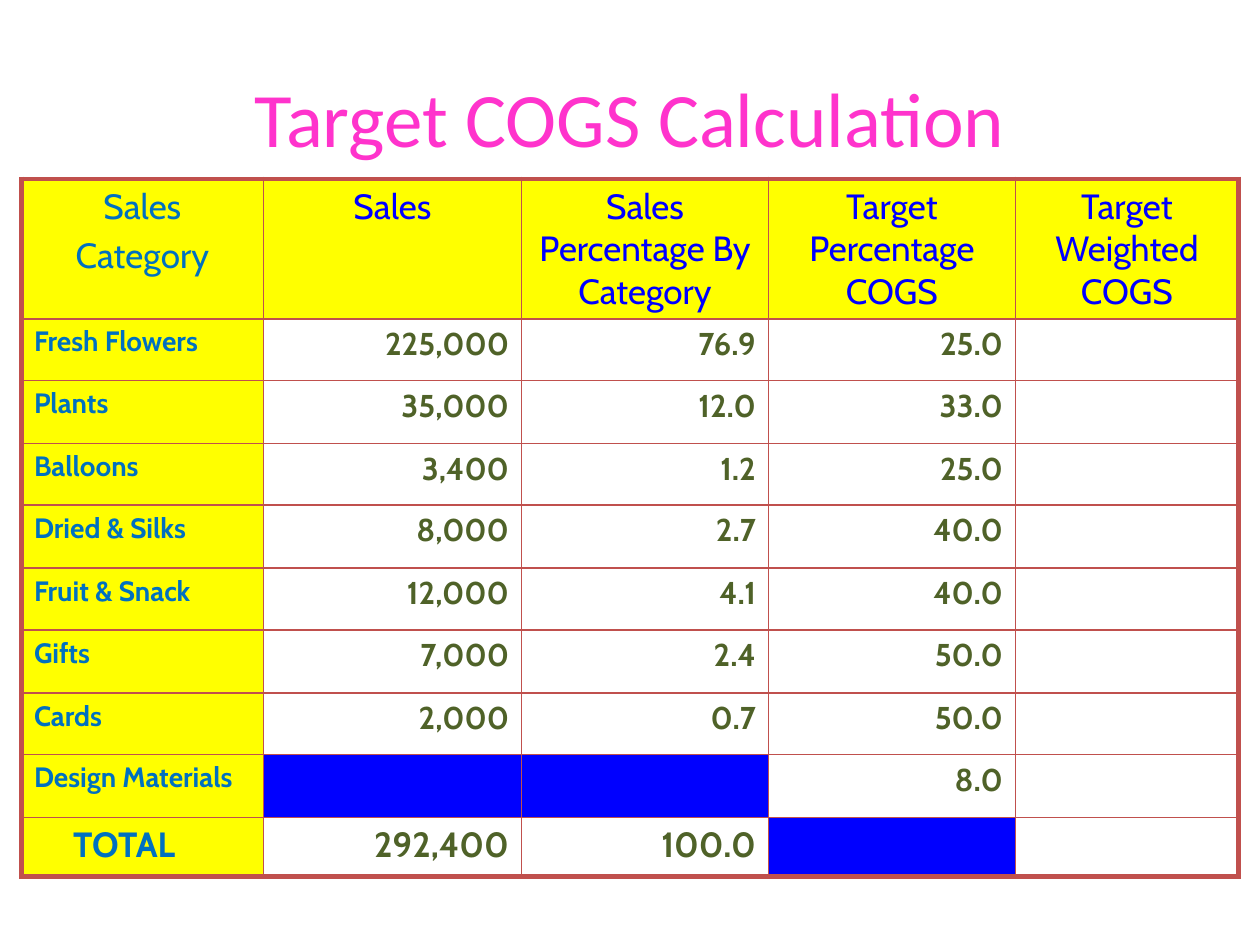
from pptx import Presentation
from pptx.dml.color import RGBColor as RGB
from pptx.enum.dml import MSO_PATTERN
from pptx.enum.text import MSO_ANCHOR as ANCHOR, PP_ALIGN as ALIGN
from pptx.oxml.ns import qn
from pptx.util import Inches, Pt
from lxml.etree import SubElement

COLORS = {"title": "FF33CC", "border": "C0504D", "label": "0070C0", "header": "0000FF",
          "value": "4F6228", "yellow": "FFFF00", "blocked": "0000FF"}
HEADERS = ["Sales\nCategory", "Sales", "Sales Percentage By Category",
           "Target Percentage COGS", "Target Weighted COGS"]
ROWS = [
    ["Fresh Flowers", "225,000", "76.9", "25.0", ""],
    ["Plants", "35,000", "12.0", "33.0", ""],
    ["Balloons", "3,400", "1.2", "25.0", ""],
    ["Dried & Silks", "8,000", "2.7", "40.0", ""],
    ["Fruit & Snack", "12,000", "4.1", "40.0", ""],
    ["Gifts", "7,000", "2.4", "50.0", ""],
    ["Cards", "2,000", "0.7", "50.0", ""],
    ["Design Materials", None, None, "8.0", ""],
    ["TOTAL", "292,400", "100.0", None, ""],
]
COL_WIDTHS = [1.92, 2.05, 1.96, 1.96, 1.77]
ROW_HEIGHTS = [1.11] + [0.49, 0.5] * 4 + [0.47]


def color(name):
    return RGB.from_string(COLORS[name])


def write(tf, text, align, fill, **font):
    for i, line in enumerate(text.split("\n")):
        p = tf.paragraphs[0] if i == 0 else tf.add_paragraph()
        p.alignment = align
        if i:
            p.space_before = Pt(4)
        r = p.add_run()
        r.text = line
        r.font.color.rgb = color(fill)
        for key, value in font.items():
            setattr(r.font, key, value)


def add_title(s, box):
    tf = s.shapes.add_textbox(*map(Inches, box)).text_frame
    tf.word_wrap = True
    tf.vertical_anchor = ANCHOR.MIDDLE
    write(tf, "Target COGS Calculation", ALIGN.CENTER, "title", name="Calibri", size=Pt(44))


def set_borders(cell, outer):
    tc_pr = cell._tc.get_or_add_tcPr()
    for side in "LRTB":
        ln = SubElement(tc_pr, qn(f"a:ln{side}"), w=str(Pt(3 if side in outer else 1)))
        solid = SubElement(ln, qn("a:solidFill"))
        SubElement(solid, qn("a:srgbClr"), val=COLORS["border"])


def set_fill(cell, text, is_label):
    if text is None:
        cell.fill.patterned()
        cell.fill.pattern = MSO_PATTERN.WIDE_UPWARD_DIAGONAL
        cell.fill.fore_color.rgb = color("blocked")
        cell.fill.back_color.rgb = color("blocked")
    elif is_label:
        cell.fill.solid()
        cell.fill.fore_color.rgb = color("yellow")
    else:
        cell.fill.background()


def add_cogs_table(s, box):
    data = [HEADERS] + ROWS
    last_row, last_col = len(data) - 1, len(HEADERS) - 1
    table = s.shapes.add_table(len(data), len(HEADERS), *map(Inches, box)).table
    table.first_row = table.horz_banding = False
    for column, width in zip(table.columns, COL_WIDTHS):
        column.width = Inches(width)
    for row, height in zip(table.rows, ROW_HEIGHTS):
        row.height = Inches(height)
    for i, values in enumerate(data):
        for j, text in enumerate(values):
            cell = table.cell(i, j)
            edges = {"T": i == 0, "B": i == last_row, "L": j == 0, "R": j == last_col}
            set_borders(cell, [side for side, is_outer in edges.items() if is_outer])
            set_fill(cell, text, i == 0 or j == 0)
            if not text:
                continue
            if i == 0:
                align = ALIGN.CENTER
            else:
                align = ALIGN.LEFT if j == 0 else ALIGN.RIGHT
            fill = "label" if j == 0 else "header" if i == 0 else "value"
            size = 20 if i in (0, last_row) else 16 if j == 0 else 18
            write(cell.text_frame, text, align, fill, name="Cabin", size=Pt(size), bold=i > 0)
    table.cell(last_row, 0).margin_left = Inches(0.41)


def main():
    prs = Presentation()
    prs.slide_width, prs.slide_height = Inches(10), Inches(7.5)
    s = prs.slides.add_slide(prs.slide_layouts[6])
    add_title(s, (0.5, 0.3, 9, 1.25))
    add_cogs_table(s, (0.17, 1.42, 9.67, 5.67))
    prs.save("out.pptx")


if __name__ == "__main__":
    main()
